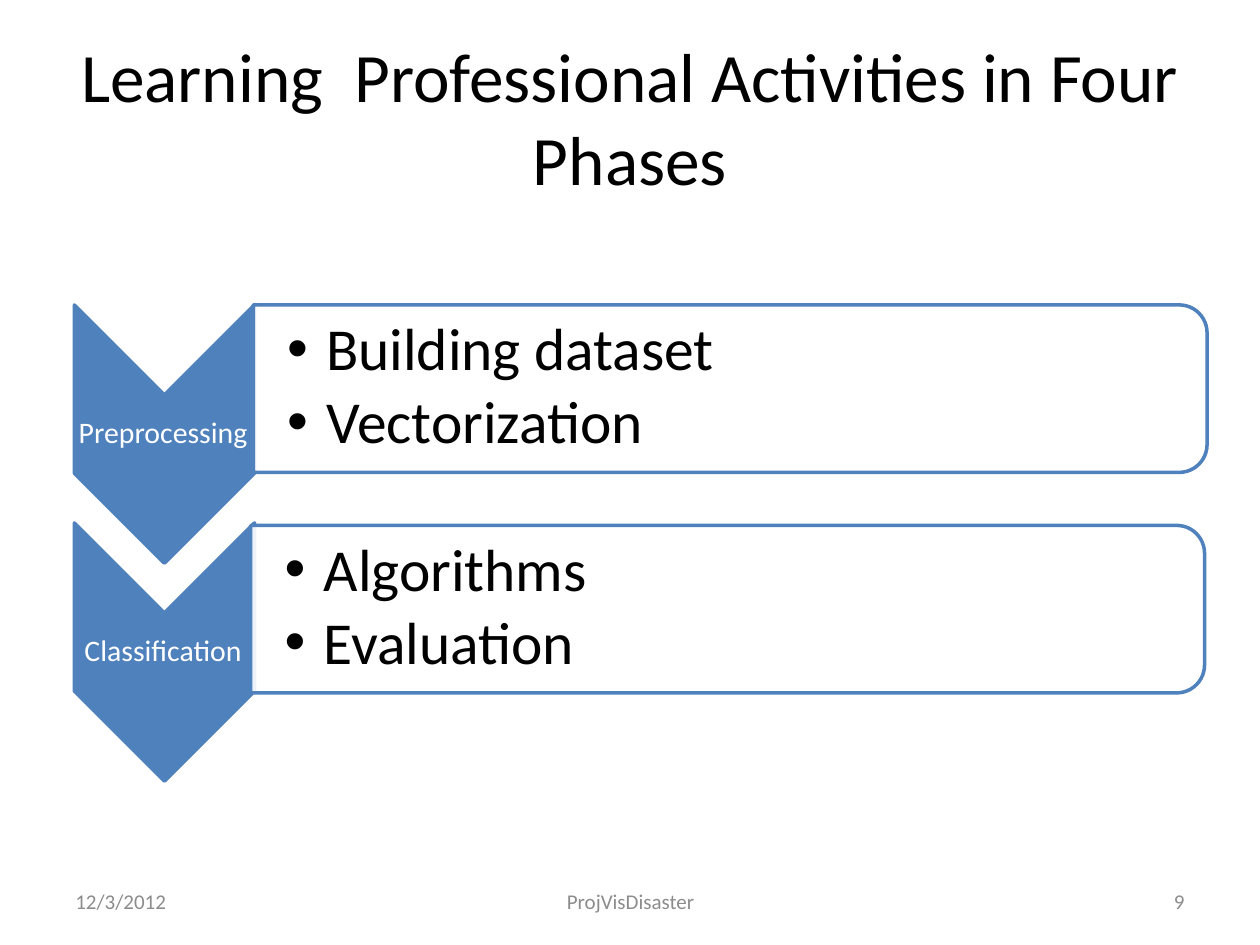
"""Build the slide on learning professional activities in phases."""
from dataclasses import dataclass

from lxml.etree import SubElement
from pptx import Presentation
from pptx.dml.color import RGBColor
from pptx.enum.shapes import MSO_SHAPE as Shape
from pptx.enum.text import MSO_ANCHOR as Anchor, PP_ALIGN as Align
from pptx.oxml.ns import qn
from pptx.util import Pt

SCALE = 9144


@dataclass(frozen=True)
class Theme:
    font: str = "Calibri"
    black: RGBColor = RGBColor(0, 0, 0)
    white: RGBColor = RGBColor(255, 255, 255)
    blue: RGBColor = RGBColor(0x4F, 0x81, 0xBD)
    gray: RGBColor = RGBColor(0x8C, 0x8C, 0x8C)
    title_size: float = 39.6
    label_size: int = 17
    bullet_size: int = 34
    footer_size: int = 12


theme = Theme()


def add_text(box, lines, size, color, align, insets=(10, 5, 10, 5),
             spacing=None, after=0, bulleted=False):
    left, top, width, height = (value * SCALE for value in box)
    frame = slide.shapes.add_textbox(left, top, width, height).text_frame
    frame.word_wrap = True
    frame.vertical_anchor = Anchor.MIDDLE
    (frame.margin_left, frame.margin_top,
     frame.margin_right, frame.margin_bottom) = (value * SCALE for value in insets)
    for index, line in enumerate(lines):
        paragraph = frame.paragraphs[0] if index == 0 else frame.add_paragraph()
        paragraph.text = line
        paragraph.alignment = align
        paragraph.line_spacing = spacing
        paragraph.space_after = Pt(after)
        if bulleted:
            properties = paragraph._p.get_or_add_pPr()
            properties.set("marL", str(31 * SCALE))
            properties.set("indent", str(-31 * SCALE))
            SubElement(properties, qn("a:buFont"), typeface="Arial")
            SubElement(properties, qn("a:buChar"), char="•")
        paragraph.font.name = theme.font
        paragraph.font.size = Pt(size)
        paragraph.font.color.rgb = color


def add_turned_shape(kind, box, color):
    left, top, width, height = (value * SCALE for value in box)
    shape = slide.shapes.add_shape(kind, left, top, width, height)
    shape.rotation = 90
    shape.shadow.inherit = False
    shape.fill.solid()
    shape.fill.fore_color.rgb = color
    shape.line.color.rgb = theme.blue
    shape.line.width = Pt(2)
    return shape


presentation = Presentation()
presentation.slide_width = 1000 * SCALE
presentation.slide_height = 750 * SCALE
slide = presentation.slides.add_slide(presentation.slide_layouts[6])

add_text((50, 30, 900, 125), ["Learning  Professional Activities in Four Phases"],
         theme.title_size, theme.black, Align.CENTER)

phases = [
    ("Preprocessing", ["Building dataset", "Vectorization"], 273, 248, 202),
    ("Classification", ["Algorithms", "Evaluation"], 446, 423, 200),
]
for name, steps, chevron_top, steps_top, steps_left in phases:
    chevron = add_turned_shape(Shape.CHEVRON, (28, chevron_top, 205, 143), theme.blue)
    chevron.adjustments[0] = 0.5
    add_text((58, chevron_top + 41, 143, 61), [name], theme.label_size, theme.white,
             Align.CENTER, insets=(1, 1, 1, 1), spacing=0.9, after=6)
    panel = add_turned_shape(Shape.ROUND_2_SAME_RECTANGLE,
                             (steps_left + 311, steps_top - 318, 133, 757), theme.white)
    panel_color = panel.fill._xPr.find(qn("a:solidFill"))[0]
    SubElement(panel_color, qn("a:alpha"), val="90000")
    add_text((steps_left, steps_top, 750, 120), steps, theme.bullet_size, theme.black,
             Align.LEFT, insets=(26, 2, 2, 2), spacing=0.9, after=5, bulleted=True)

footers = [
    (50, 233, "12/3/2012", Align.LEFT),
    (342, 317, "ProjVisDisaster", Align.CENTER),
    (717, 233, "9", Align.RIGHT),
]
for left, width, words, align in footers:
    add_text((left, 695, width, 40), [words], theme.footer_size, theme.gray, align)

presentation.save("out.pptx")
